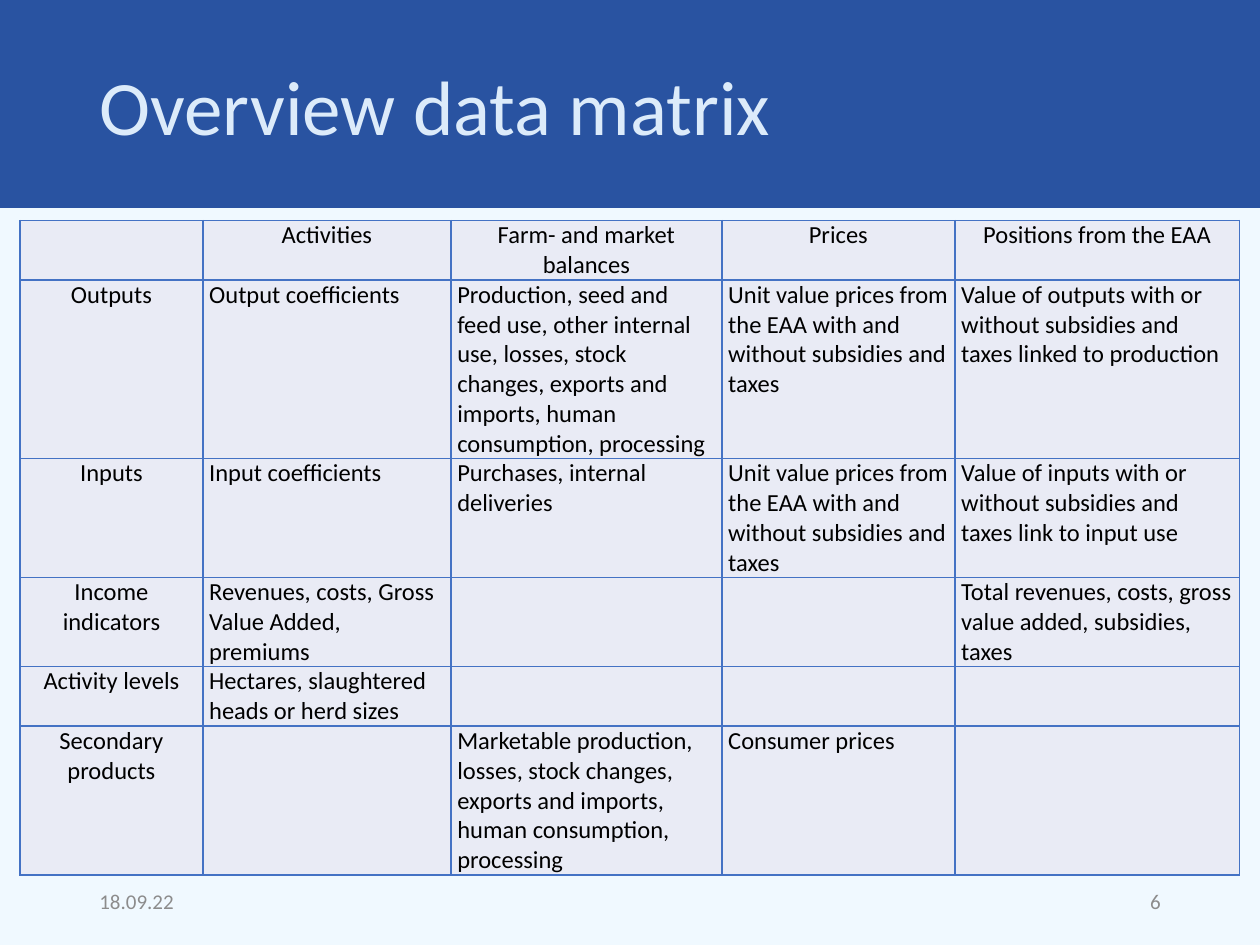
from lxml import etree
from pptx import Presentation
from pptx import util as u
from pptx.dml.color import RGBColor
from pptx.enum import shapes, text
from pptx.oxml import ns

BACKGROUND = RGBColor(0xF0, 0xF9, 0xFF)
BAND_BLUE = RGBColor(0x29, 0x53, 0xA1)
TITLE_BLUE = RGBColor(0xDC, 0xEB, 0xFA)
FOOTER_GREY = RGBColor(0x8C, 0x8C, 0x8C)
CELL_FILL = RGBColor(0xE9, 0xEB, 0xF5)
GRID_BLUE = RGBColor(0x44, 0x72, 0xC4)
BLACK = RGBColor(0, 0, 0)

LEFT, CENTER, RIGHT = text.PP_ALIGN.LEFT, text.PP_ALIGN.CENTER, text.PP_ALIGN.RIGHT
MIDDLE = text.MSO_ANCHOR.MIDDLE

UNIT_VALUES = "Unit value prices from the EAA with and without subsidies and taxes"
MATRIX = [
    ["", "Activities", "Farm- and market balances", "Prices", "Positions from the EAA"],
    ["Outputs", "Output coefficients",
     "Production, seed and feed use, other internal use, losses, stock changes, "
     "exports and imports, human consumption, processing",
     UNIT_VALUES,
     "Value of outputs with or without subsidies and taxes linked to production"],
    ["Inputs", "Input coefficients", "Purchases, internal deliveries", UNIT_VALUES,
     "Value of inputs with or without subsidies and taxes link to input use"],
    ["Income indicators", "Revenues, costs, Gross Value Added, premiums", "", "",
     "Total revenues, costs, gross value added, subsidies, taxes"],
    ["Activity levels", "Hectares, slaughtered heads or herd sizes", "", "", ""],
    ["Secondary products", "",
     "Marketable production, losses, stock changes, exports and imports, "
     "human consumption, processing",
     "Consumer prices", ""],
]
COLUMN_WIDTHS = [104.4, 141.8, 154.8, 133.2, 162.7]
ROW_LINES = [2, 6, 4, 3, 2, 5]
LINE_HEIGHT = 17


class MatrixSlide:
    font = "Calibri"

    def __init__(self, deck):
        self.slide = deck.slides.add_slide(deck.slide_layouts[5])
        fill = self.slide.background.fill
        fill.solid()
        fill.fore_color.rgb = BACKGROUND

    def add_wording(self, paragraph, wording, size, color, align):
        paragraph.alignment = align
        run = paragraph.add_run()
        run.text = wording
        run.font.name = self.font
        run.font.size = u.Pt(size)
        run.font.color.rgb = color

    def title(self, wording, left, top, width, height):
        heading = self.slide.shapes.title
        heading.left, heading.top = u.Pt(left), u.Pt(top)
        heading.width, heading.height = u.Pt(width), u.Pt(height)
        frame = heading.text_frame
        frame.vertical_anchor = MIDDLE
        frame.paragraphs[0].line_spacing = 0.9
        self.add_wording(frame.paragraphs[0], wording, 44, TITLE_BLUE, LEFT)

    def band(self, width, height):
        band = self.slide.shapes.add_shape(
            shapes.MSO_SHAPE.RECTANGLE, 0, 0, u.Pt(width), u.Pt(height))
        band.shadow.inherit = False
        band.fill.solid()
        band.fill.fore_color.rgb = BAND_BLUE
        band.line.fill.background()
        self.slide.shapes.title.element.addprevious(band.element)

    def footer(self, wording, left, align):
        box = self.slide.shapes.add_textbox(u.Pt(left), u.Pt(500.4), u.Pt(162), u.Pt(28.8))
        frame = box.text_frame
        frame.word_wrap = True
        frame.vertical_anchor = MIDDLE
        self.add_wording(frame.paragraphs[0], wording, 12, FOOTER_GREY, align)

    def matrix(self, rows, left, top):
        heights = [lines * LINE_HEIGHT for lines in ROW_LINES]
        holder = self.slide.shapes.add_table(
            len(rows), len(COLUMN_WIDTHS), u.Pt(left), u.Pt(top),
            u.Pt(sum(COLUMN_WIDTHS)), u.Pt(sum(heights)))
        table = holder.table
        table.first_row = table.horz_banding = False
        for column, width in zip(table.columns, COLUMN_WIDTHS):
            column.width = u.Pt(width)
        for r, (row, height) in enumerate(zip(rows, heights)):
            table.rows[r].height = u.Pt(height)
            for c, wording in enumerate(row):
                align = CENTER if r == 0 or c == 0 else LEFT
                self.cell(table.cell(r, c), wording, align)
        for properties in holder.element.iter(ns.qn("a:tcPr")):
            self.borders(properties)

    def cell(self, cell, wording, align):
        cell.margin_left = cell.margin_right = u.Pt(3.6)
        cell.margin_top = cell.margin_bottom = 0
        cell.fill.solid()
        cell.fill.fore_color.rgb = CELL_FILL
        if wording:
            paragraph = cell.text_frame.paragraphs[0]
            paragraph.space_after = u.Pt(6)
            self.add_wording(paragraph, wording, 14, BLACK, align)

    def borders(self, properties):
        for position, side in enumerate(("lnL", "lnR", "lnT", "lnB")):
            line = etree.Element(ns.qn(f"a:{side}"), w=str(u.Pt(1)))
            fill = etree.SubElement(line, ns.qn("a:solidFill"))
            etree.SubElement(fill, ns.qn("a:srgbClr"), val=str(GRID_BLUE))
            properties.insert(position, line)


def main():
    deck = Presentation()
    deck.slide_width, deck.slide_height = u.Pt(720), u.Pt(540)
    overview = MatrixSlide(deck)
    overview.band(720, 118.8)
    overview.title("Overview data matrix", 49.7, 10.8, 620.6, 104.4)
    overview.footer("18.09.22", 49.7, LEFT)
    overview.footer("6", 508.3, RIGHT)
    overview.matrix(MATRIX, 11.5, 126)
    deck.save("out.pptx")


if __name__ == "__main__":
    main()
